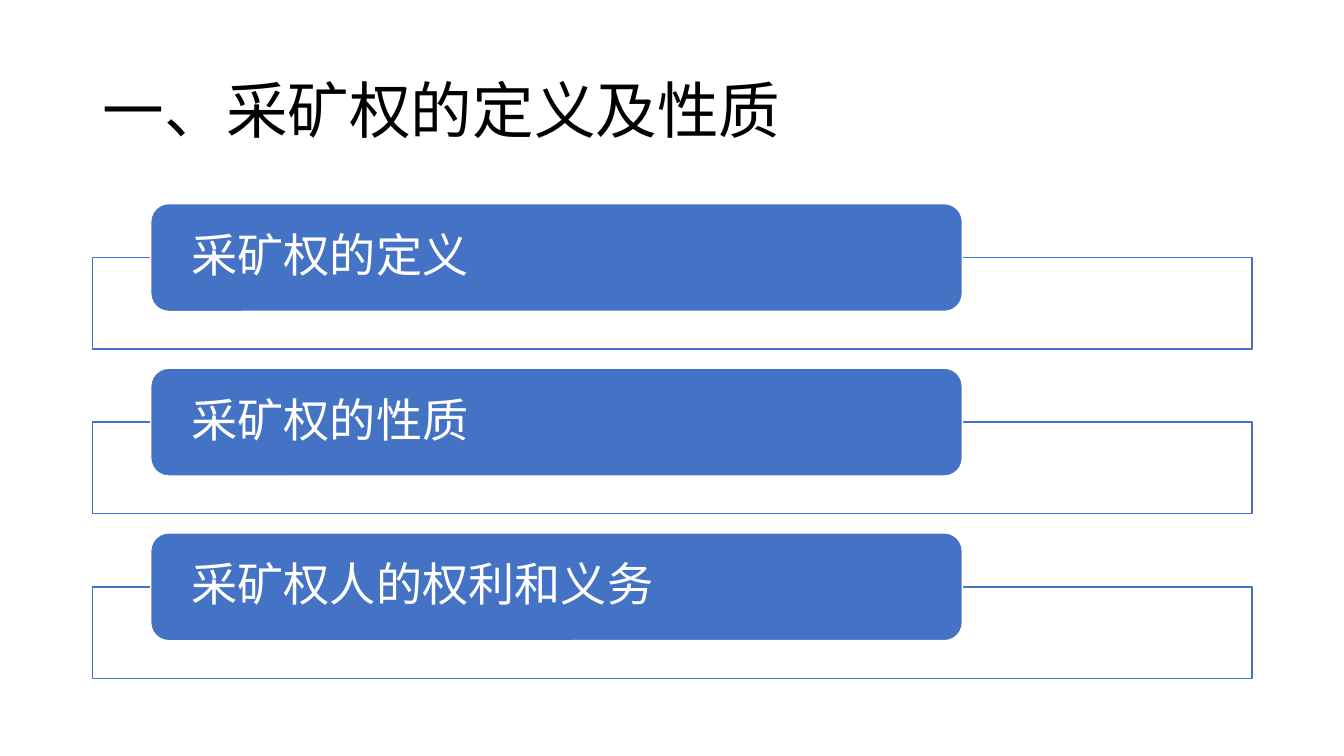
from lxml.etree import SubElement
from pptx import Presentation
from pptx.dml.color import RGBColor
from pptx.enum.shapes import MSO_SHAPE as Shape
from pptx.enum.text import MSO_ANCHOR as Anchor, PP_ALIGN as Align
from pptx.oxml.ns import qn
from pptx.util import Inches, Pt

BLUE = RGBColor(0x44, 0x72, 0xC4)
WHITE = RGBColor(0xFF, 0xFF, 0xFF)
BLACK = RGBColor(0, 0, 0)
FONT = "Noto Sans CJK SC"
TOPICS = ["采矿权的定义", "采矿权的性质", "采矿权人的权利和义务"]


def write(shape, text, size, color, inset):
    """Put one left-aligned, vertically centred line into a shape."""
    frame = shape.text_frame
    form = {"word_wrap": True, "vertical_anchor": Anchor.MIDDLE,
            "margin_left": Inches(inset), "margin_right": Inches(inset),
            "margin_top": 0, "margin_bottom": 0}
    for key, value in form.items():
        setattr(frame, key, value)
    para = frame.paragraphs[0]
    para.alignment, para.line_spacing = Align.LEFT, 0.9
    run = para.add_run()
    run.text = text
    for key, value in {"size": Pt(size), "name": FONT}.items():
        setattr(run.font, key, value)
    run.font.color.rgb = color
    SubElement(run.font._element, qn("a:ea"), typeface=FONT)


def add_box(slide, kind, box, fill, line):
    """Draw a filled and outlined shape without a shadow."""
    shape = slide.shapes.add_shape(kind, *map(Inches, box))
    shape.shadow.inherit = False
    shape.fill.solid()
    shape.fill.fore_color.rgb = fill
    shape.line.color.rgb = line
    shape.line.width = Pt(1)
    return shape


def add_title(slide, box, text):
    """Place the slide title in its placeholder."""
    title = slide.shapes.title
    for key, value in zip(("left", "top", "width", "height"), box):
        setattr(title, key, Inches(value))
    write(title, text, 44, BLACK, 0.1)


def add_topic(slide, box, text):
    """Draw an open frame with a labelled bar over its top edge."""
    left, top, width, height = box
    bar = 1.07
    frame = add_box(slide, Shape.RECTANGLE,
                    (left, top + bar / 2, width, height - bar / 2), WHITE, BLUE)
    tint = frame.fill._xPr.find(".//" + qn("a:srgbClr"))
    SubElement(tint, qn("a:alpha"), val="90000")
    label = add_box(slide, Shape.ROUNDED_RECTANGLE,
                    (left + width * 0.05, top, width * 0.7, bar), BLUE, WHITE)
    write(label, text, 33, WHITE, 0.35)


def add_list(slide, box, topics):
    """Stack the topics at an equal pitch inside the box."""
    left, top, width, height = box
    gap = 0.19
    tall = (height + gap) / len(topics) - gap
    for i, text in enumerate(topics):
        add_topic(slide, (left, top + i * (tall + gap), width, tall), text)


def main():
    """Build and save the slide."""
    deck = Presentation()
    deck.slide_width, deck.slide_height = Inches(13.33), Inches(7.5)
    slide = deck.slides.add_slide(deck.slide_layouts[5])
    add_title(slide, (0.92, 0.4, 11.5, 1.45), "一、采矿权的定义及性质")
    add_list(slide, (0.92, 2.02, 11.5, 4.71), TOPICS)
    deck.save("out.pptx")


if __name__ == "__main__":
    main()
